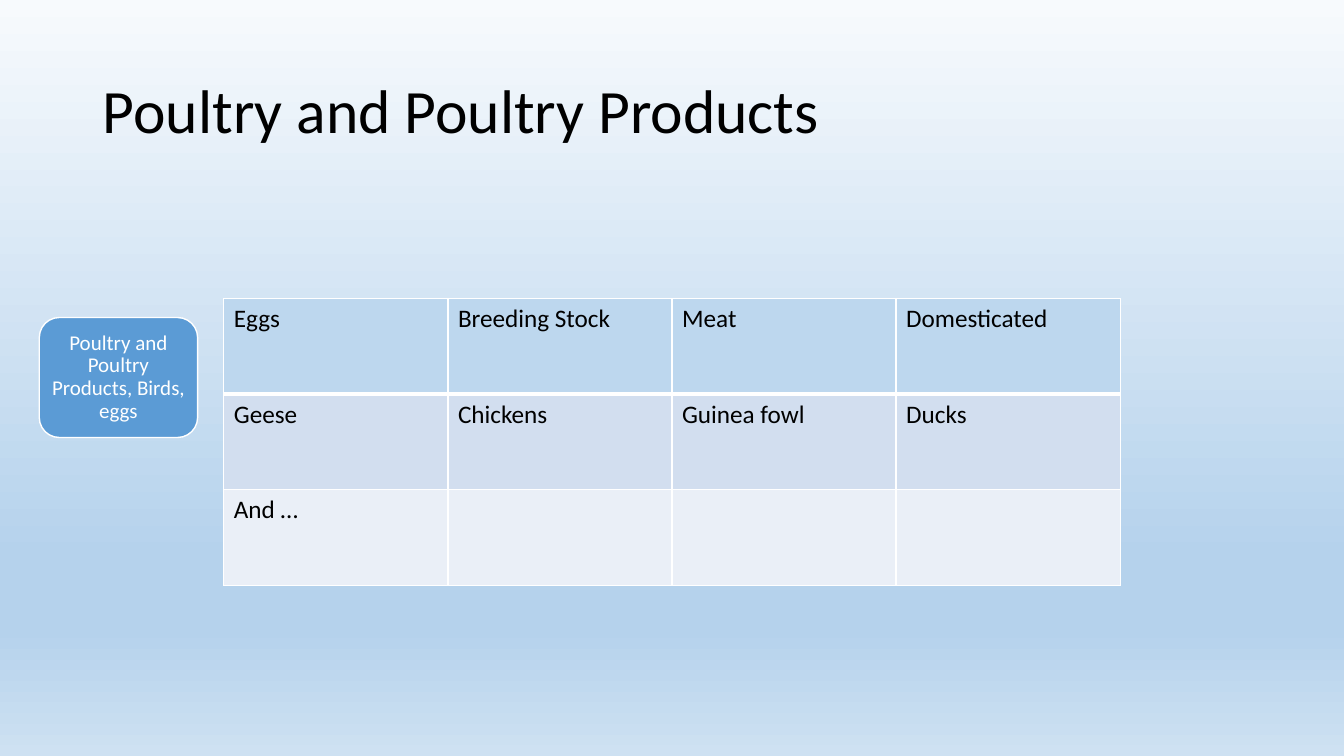
from dataclasses import dataclass

import lxml.etree
import pptx
import pptx.dml.color
import pptx.enum.shapes
import pptx.enum.text
import pptx.oxml.ns
import pptx.util
from pptx.util import Inches


@dataclass(frozen=True)
class Theme:
    font: str = "Calibri"
    text: str = "000000"
    white: str = "FFFFFF"
    label_fill: str = "5B9BD5"
    row_fills: tuple = ("BDD7EE", "D2DEEF", "EAEFF7")
    sky: tuple = ((0, "F7FAFD"), (74, "B5D2EC"), (83, "B5D2EC"), (100, "CEE1F2"))
    title_size: int = 44
    table_size: int = 18
    label_size: int = 15
    thin: int = 1
    thick: int = 3


THEME = Theme()
PRODUCTS = (
    ("Eggs", "Breeding Stock", "Meat", "Domesticated"),
    ("Geese", "Chickens", "Guinea fowl", "Ducks"),
    ("And …", "", "", ""),
)


def rgb(color):
    return pptx.dml.color.RGBColor.from_string(color)


def add_element(parent, tag, **attributes):
    return lxml.etree.SubElement(parent, pptx.oxml.ns.qn(tag), attributes)


def write(frame, text, size, color, align=pptx.enum.text.PP_ALIGN.LEFT, spacing=None):
    frame.text = text
    paragraph = frame.paragraphs[0]
    paragraph.alignment = align
    paragraph.line_spacing = spacing
    paragraph.font.name = THEME.font
    paragraph.font.size = pptx.util.Pt(size)
    paragraph.font.color.rgb = rgb(color)


def paint_background(slide):
    fill = slide.background.fill
    fill.gradient()
    fill.gradient_angle = 270
    stops = slide.element.find(".//" + pptx.oxml.ns.qn("a:gsLst"))
    for stop in list(stops):
        stops.remove(stop)
    for percent, color in THEME.sky:
        stop = add_element(stops, "a:gs", pos=str(percent * 1000))
        add_element(stop, "a:srgbClr", val=color)


def set_title(slide, text):
    title = slide.shapes.title
    title.left, title.top = Inches(0.92), Inches(0.4)
    title.width, title.height = Inches(11.5), Inches(1.45)
    frame = title.text_frame
    frame.auto_size = pptx.enum.text.MSO_AUTO_SIZE.NONE
    frame.vertical_anchor = pptx.enum.text.MSO_ANCHOR.MIDDLE
    write(frame, text, THEME.title_size, THEME.text, spacing=0.9)


def add_label(slide, text, left, top, width, height):
    label = slide.shapes.add_shape(
        pptx.enum.shapes.MSO_SHAPE.ROUNDED_RECTANGLE, left, top, width, height)
    label.shadow.inherit = False
    label.fill.solid()
    label.fill.fore_color.rgb = rgb(THEME.label_fill)
    label.line.color.rgb = rgb(THEME.white)
    label.line.width = pptx.util.Pt(THEME.thin)
    frame = label.text_frame
    frame.word_wrap = True
    frame.vertical_anchor = pptx.enum.text.MSO_ANCHOR.MIDDLE
    frame.margin_left = frame.margin_right = Inches(0.06)
    frame.margin_top = frame.margin_bottom = Inches(0.04)
    write(frame, text, THEME.label_size, THEME.white,
          pptx.enum.text.PP_ALIGN.CENTER, 0.9)


def add_borders(cell, top, bottom):
    properties = cell._tc.get_or_add_tcPr()
    sides = (("L", THEME.thin), ("R", THEME.thin), ("T", top), ("B", bottom))
    for side, width in sides:
        line = add_element(properties, f"a:ln{side}", w=str(pptx.util.Pt(width)))
        add_element(add_element(line, "a:solidFill"), "a:srgbClr", val=THEME.white)


def add_product_table(slide, rows, left, top, width, height):
    table = slide.shapes.add_table(
        len(rows), len(rows[0]), left, top, width, height).table
    for r, row in enumerate(rows):
        above = THEME.thick if r == 1 else THEME.thin
        below = THEME.thick if r == 0 else THEME.thin
        for c, product in enumerate(row):
            cell = table.cell(r, c)
            add_borders(cell, above, below)
            cell.fill.solid()
            cell.fill.fore_color.rgb = rgb(THEME.row_fills[r])
            write(cell.text_frame, product, THEME.table_size, THEME.text)


def main():
    deck = pptx.Presentation()
    deck.slide_width, deck.slide_height = Inches(13.33), Inches(7.5)
    slide = deck.slides.add_slide(deck.slide_layouts.get_by_name("Title Only"))
    paint_background(slide)
    set_title(slide, "Poultry and Poultry Products")
    add_label(slide, "Poultry and Poultry Products, Birds, eggs",
              Inches(0.39), Inches(3.15), Inches(1.57), Inches(1.19))
    add_product_table(slide, PRODUCTS,
                      Inches(2.22), Inches(2.96), Inches(8.89), Inches(2.85))
    deck.save("out.pptx")


if __name__ == "__main__":
    main()
